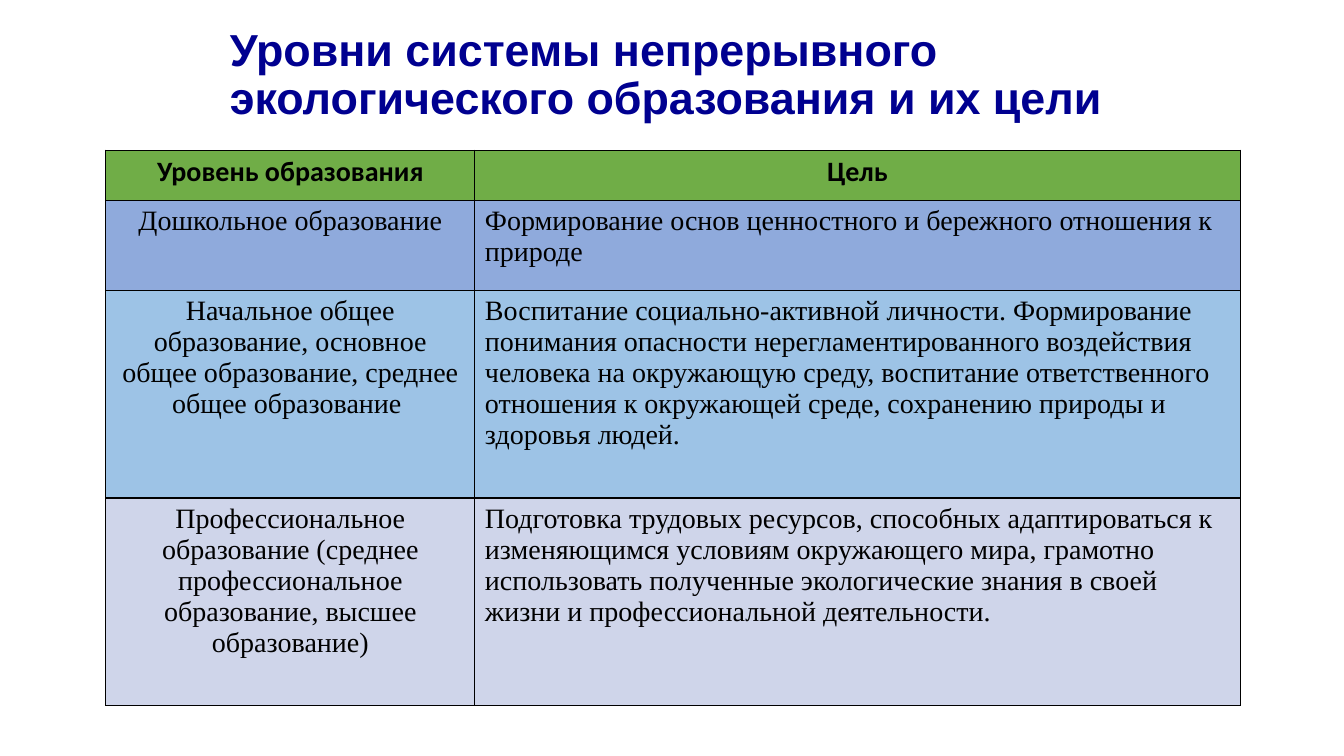
from dataclasses import dataclass

from lxml.etree import SubElement
from pptx import Presentation
from pptx.dml.color import RGBColor
from pptx.enum.text import MSO_ANCHOR, MSO_AUTO_SIZE, PP_ALIGN
from pptx.oxml.ns import qn
from pptx.slide import Slide
from pptx.table import _Cell
from pptx.text.text import TextFrame
from pptx.util import Inches, Pt

COLORS = {
    "title": "000090",
    "text": "000000",
    "border": "000000",
    "header": "70AD47",
    "preschool": "8FAADC",
    "school": "9DC3E6",
    "professional": "CFD5EA",
}
COLUMN_WIDTHS = (3.66, 7.59)
BORDER_WIDTH = Pt(1)


@dataclass(frozen=True)
class TextStyle:
    font: str
    size: int
    color: str
    bold: bool = False


@dataclass(frozen=True)
class LevelRow:
    level: str
    goal: str
    fill: str
    height: float
    is_header: bool = False


TITLE_STYLE = TextStyle("Arial", 32, "title", bold=True)
HEADER_STYLE = TextStyle("Calibri", 20, "text", bold=True)
BODY_STYLE = TextStyle("Times New Roman", 20, "text")

ROWS = [
    LevelRow("Уровень образования", "Цель", "header", 0.5, is_header=True),
    LevelRow(
        "Дошкольное образование",
        "Формирование основ ценностного и бережного отношения к природе",
        "preschool", 0.89,
    ),
    LevelRow(
        "Начальное общее образование, основное общее образование, "
        "среднее общее образование ",
        "Воспитание социально-активной личности. Формирование понимания "
        "опасности нерегламентированного воздействия человека на окружающую "
        "среду, воспитание ответственного отношения к окружающей среде, "
        "сохранению природы и здоровья людей.",
        "school", 2.06,
    ),
    LevelRow(
        "Профессиональное образование (среднее профессиональное "
        "образование, высшее образование)",
        "Подготовка трудовых ресурсов, способных адаптироваться к "
        "изменяющимся условиям окружающего мира, грамотно использовать "
        "полученные экологические знания в своей жизни и профессиональной "
        "деятельности.",
        "professional", 2.06,
    ),
]


def write_text(frame: TextFrame, text: str, style: TextStyle, align: PP_ALIGN) -> None:
    para = frame.paragraphs[0]
    para.alignment = align
    span = para.add_run()
    span.text = text
    span.font.name = style.font
    span.font.size = Pt(style.size)
    span.font.bold = style.bold
    span.font.color.rgb = RGBColor.from_string(COLORS[style.color])


def add_borders(cell: _Cell) -> None:
    """Outline a cell; border elements must precede its fill."""
    properties = cell._tc.get_or_add_tcPr()
    for index, side in enumerate(("a:lnL", "a:lnR", "a:lnT", "a:lnB")):
        line = SubElement(properties, qn(side), w=str(BORDER_WIDTH))
        fill = SubElement(line, qn("a:solidFill"))
        SubElement(fill, qn("a:srgbClr"), val=COLORS["border"])
        properties.insert(index, line)


def add_title(page: Slide) -> None:
    title = page.shapes.title
    title.left, title.top = Inches(2.18), Inches(0.13)
    title.width, title.height = Inches(9), Inches(1.25)
    frame = title.text_frame
    frame.word_wrap = True
    frame.auto_size = MSO_AUTO_SIZE.NONE
    frame.vertical_anchor = MSO_ANCHOR.MIDDLE
    write_text(
        frame, "Уровни системы непрерывного экологического образования и их цели",
        TITLE_STYLE, PP_ALIGN.LEFT,
    )
    frame.paragraphs[0].line_spacing = 0.9


def add_levels_table(page: Slide) -> None:
    table = page.shapes.add_table(
        len(ROWS), len(COLUMN_WIDTHS), Inches(1.05), Inches(1.49),
        Inches(sum(COLUMN_WIDTHS)), Inches(sum(row.height for row in ROWS)),
    ).table
    for column, width in zip(table.columns, COLUMN_WIDTHS):
        column.width = Inches(width)

    for row_index, row in enumerate(ROWS):
        table.rows[row_index].height = Inches(row.height)
        style = HEADER_STYLE if row.is_header else BODY_STYLE
        for column_index, text in enumerate((row.level, row.goal)):
            cell = table.cell(row_index, column_index)
            cell.fill.solid()
            cell.fill.fore_color.rgb = RGBColor.from_string(COLORS[row.fill])
            centered = row.is_header or column_index == 0
            align = PP_ALIGN.CENTER if centered else PP_ALIGN.LEFT
            write_text(cell.text_frame, text, style, align)
            add_borders(cell)


def main() -> None:
    deck = Presentation()
    deck.slide_width, deck.slide_height = Inches(13.33), Inches(7.5)
    # Title-only layout
    page = deck.slides.add_slide(deck.slide_layouts[5])
    add_title(page)
    add_levels_table(page)
    deck.save("out.pptx")


if __name__ == "__main__":
    main()
